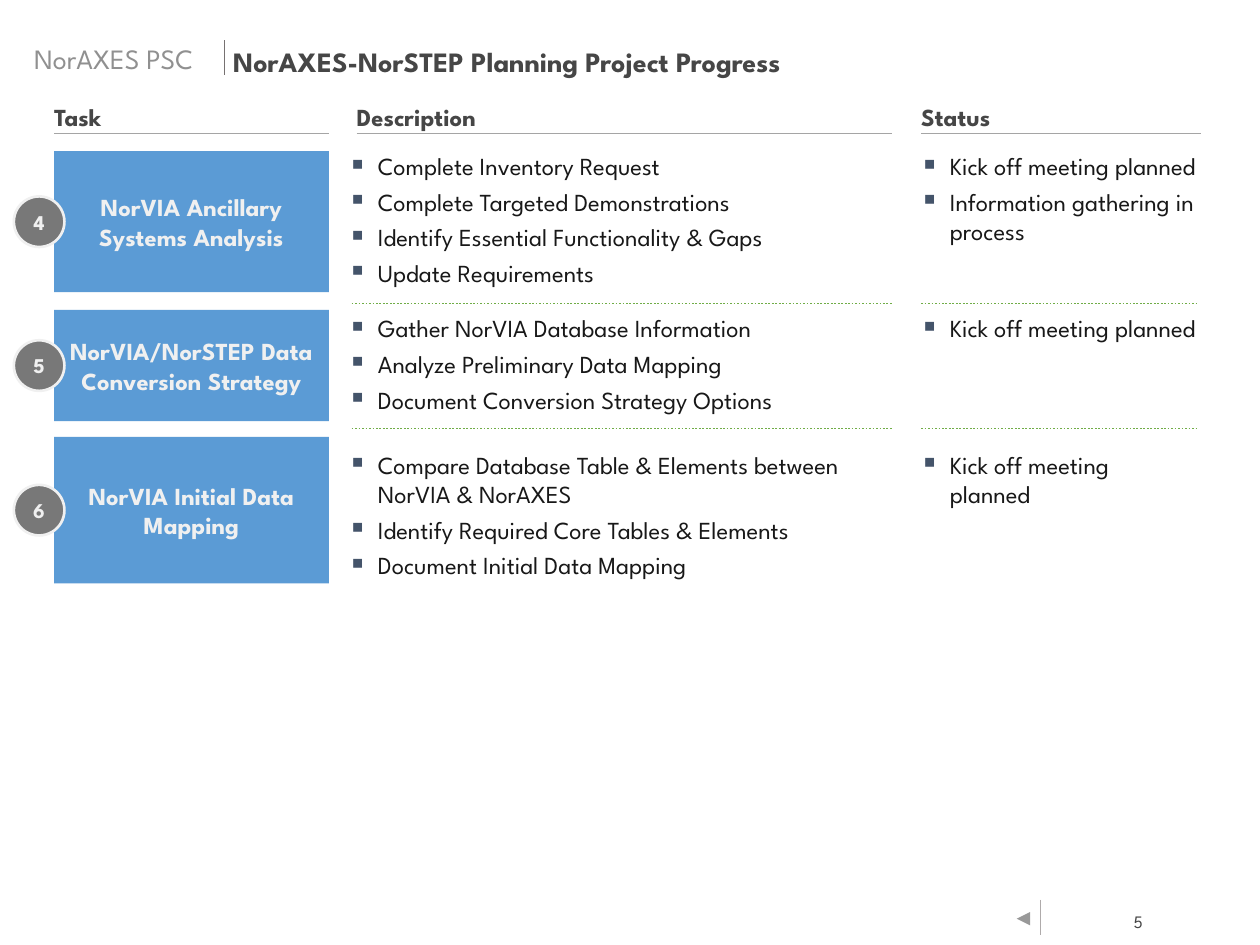
from lxml.etree import SubElement
from pptx import Presentation
from pptx.dml.color import RGBColor
from pptx.enum.dml import MSO_LINE
from pptx.enum.shapes import MSO_CONNECTOR, MSO_SHAPE
from pptx.enum.text import MSO_ANCHOR, MSO_AUTO_SIZE, PP_ALIGN
from pptx.oxml.ns import qn
from pptx.util import Cm, Pt

FONT = "League Spartan"
COLORS = {
    "heading": "464646", "body": "181818", "section": "909090", "light": "F0F0F0",
    "task": "5B9BD5", "badge": "787878", "bullet": "44546A", "rule": "A5A5A5",
    "separator": "70AD47", "title_rule": "767171", "footer_rule": "AFABAB",
    "white": "FFFFFF",
}
TASK_LEFT, TASK_WIDTH = 1.09, 5.54
DESCRIPTION_LEFT, DESCRIPTION_WIDTH = 7.09, 10.9
STATUS_LEFT = 18.62
BADGE_SIZE = 1.02
HEADERS = [("Task", TASK_LEFT, 5.54), ("Description", 7.19, 10.8), ("Status", 18.57, 5.64)]
SEPARATOR_SPANS = [(7.09, 17.98), (18.57, 24.15)]
SEPARATOR_TOPS = [6.12, 8.64]
TASKS = [
    {"number": "4", "name": "NorVIA Ancillary Systems Analysis",
     "top": 3.05, "height": 2.84, "text_top": 3.05, "text_height": 2.84,
     "description": ["Complete Inventory Request", "Complete Targeted Demonstrations",
                     "Identify Essential Functionality & Gaps", "Update Requirements"],
     "status": ["Kick off meeting planned", "Information gathering in process"],
     "status_width": 5.59, "status_height": 2.54},
    {"number": "5", "name": "NorVIA/NorSTEP Data Conversion Strategy",
     "top": 6.25, "height": 2.24, "text_top": 6.32, "text_height": 2.08,
     "description": ["Gather NorVIA Database Information", "Analyze Preliminary Data Mapping",
                     "Document Conversion Strategy Options"],
     "status": ["Kick off meeting planned"],
     "status_width": 5.59, "status_height": 1.19},
    {"number": "6", "name": "NorVIA Initial Data Mapping",
     "top": 8.81, "height": 2.95, "text_top": 9.07, "text_height": 2.69,
     "description": ["Compare Database Table & Elements between NorVIA & NorAXES",
                     "Identify Required Core Tables & Elements", "Document Initial Data Mapping"],
     "status": ["Kick off meeting planned"],
     "status_width": 5.36, "status_height": 1.19},
]


def color(name):
    """Return the named colour."""
    return RGBColor.from_string(COLORS[name])


def set_frame(frame, margins=(0, 0, 0, 0), anchor=MSO_ANCHOR.TOP, wrap=True):
    """Set the margins, anchor and wrapping of a text frame."""
    frame.margin_left, frame.margin_top, frame.margin_right, frame.margin_bottom = map(Cm, margins)
    frame.vertical_anchor = anchor
    frame.word_wrap = wrap
    frame.auto_size = MSO_AUTO_SIZE.NONE


def format_paragraph(paragraph, size, color_name, bold=False, alignment=PP_ALIGN.LEFT):
    """Set the font and alignment of a paragraph."""
    paragraph.alignment = alignment
    font = paragraph.font
    font.name, font.size, font.bold = FONT, Pt(size), bold
    font.color.rgb = color(color_name)


def add_bullet(paragraph):
    """Give a paragraph a square bullet with a hanging indent."""
    properties = paragraph._p.get_or_add_pPr()
    properties.set("marL", str(Cm(0.53)))
    properties.set("indent", str(Cm(-0.53)))
    bullet_color = SubElement(properties, qn("a:buClr"))
    SubElement(bullet_color, qn("a:srgbClr"), val=COLORS["bullet"])
    SubElement(properties, qn("a:buSzPct"), val="125000")
    SubElement(properties, qn("a:buFont"), typeface=FONT)
    SubElement(properties, qn("a:buChar"), char="▪")


def add_label(slide, text, box, size, color_name, bold=False, alignment=PP_ALIGN.LEFT, **frame_options):
    """Add a text box with a single paragraph."""
    frame = slide.shapes.add_textbox(*map(Cm, box)).text_frame
    set_frame(frame, **frame_options)
    frame.text = text
    format_paragraph(frame.paragraphs[0], size, color_name, bold, alignment)


def add_bullet_list(slide, items, box):
    """Add a text box with one bullet for each item."""
    frame = slide.shapes.add_textbox(*map(Cm, box)).text_frame
    set_frame(frame)
    frame.text = "\n".join(items)
    for paragraph in frame.paragraphs:
        add_bullet(paragraph)
        paragraph.space_before = Pt(3.5)
        format_paragraph(paragraph, 14, "body")


def add_line(slide, start, end, color_name, width, dash=None):
    """Add a straight line without a shadow."""
    line = slide.shapes.add_connector(MSO_CONNECTOR.STRAIGHT, *map(Cm, start + end))
    line.line.color.rgb = color(color_name)
    line.line.width = Pt(width)
    if dash:
        line.line.dash_style = dash
    SubElement(line._element.spPr, qn("a:effectLst"))


def add_filled_shape(slide, kind, box, fill):
    """Add a filled shape without outline or shadow."""
    shape = slide.shapes.add_shape(kind, *map(Cm, box))
    shape.shadow.inherit = False
    shape.fill.solid()
    shape.fill.fore_color.rgb = color(fill)
    shape.line.fill.background()
    return shape


def add_title(slide):
    """Fill in the title and the section name beside it."""
    title = slide.shapes.title
    title.left, title.top, title.width, title.height = map(Cm, (4.7, 0.76, 18.57, 0.94))
    margins = (0, 0.13, 0, 0.13)
    set_frame(title.text_frame, margins, MSO_ANCHOR.MIDDLE)
    title.text_frame.text = "NorAXES-NorSTEP Planning Project Progress"
    format_paragraph(title.text_frame.paragraphs[0], 16, "heading", True)
    add_label(slide, "NorAXES PSC", (0.69, 0.71, 3.7, 0.94), 16, "section",
              margins=margins, anchor=MSO_ANCHOR.MIDDLE)
    add_line(slide, (4.52, 0.81), (4.52, 1.52), "title_rule", 0.5)


def add_header(slide, text, left, width):
    """Add an underlined column header."""
    add_line(slide, (left, 2.69), (left + width, 2.69), "rule", 0.75)
    add_label(slide, text, (left, 2.03, width, 0.66), 14, "heading", True,
              margins=(0, 0, 0, 0.05), anchor=MSO_ANCHOR.BOTTOM)


def add_task(slide, task):
    """Add one task with its number, description and status."""
    top, height = task["top"], task["height"]
    block = add_filled_shape(slide, MSO_SHAPE.RECTANGLE, (TASK_LEFT, top, TASK_WIDTH, height), "task")
    set_frame(block.text_frame, (0.25, 0.13, 0.25, 0.13), MSO_ANCHOR.MIDDLE)
    block.text_frame.text = task["name"]
    format_paragraph(block.text_frame.paragraphs[0], 14, "light", True, PP_ALIGN.CENTER)

    badge_top = top + (height - BADGE_SIZE) / 2
    badge = add_filled_shape(slide, MSO_SHAPE.OVAL, (0.28, badge_top, BADGE_SIZE, BADGE_SIZE), "badge")
    badge.line.color.rgb = color("light")
    badge.line.width = Pt(1.5)
    set_frame(badge.text_frame, anchor=MSO_ANCHOR.MIDDLE, wrap=False)
    badge.text_frame.text = task["number"]
    format_paragraph(badge.text_frame.paragraphs[0], 12, "light", True, PP_ALIGN.CENTER)

    add_bullet_list(slide, task["description"],
                    (DESCRIPTION_LEFT, task["text_top"], DESCRIPTION_WIDTH, task["text_height"]))
    add_bullet_list(slide, task["status"],
                    (STATUS_LEFT, task["text_top"], task["status_width"], task["status_height"]))


def add_footer(slide):
    """Add the back button, its rule and the page number."""
    button = add_filled_shape(slide, MSO_SHAPE.ACTION_BUTTON_FORWARD_OR_NEXT,
                              (20.45, 18.29, 0.36, 0.46), "white")
    button.rotation = 180
    add_line(slide, (20.98, 18.14), (20.98, 18.85), "footer_rule", 0.5)
    add_label(slide, "5", (22.43, 18.26, 0.81, 0.61), 10, "heading",
              alignment=PP_ALIGN.RIGHT, margins=(0.2, 0.1, 0.2, 0.1), wrap=False)


def main():
    """Build and save the slide."""
    presentation = Presentation()
    presentation.slide_width, presentation.slide_height = Cm(25.4), Cm(19.05)
    slide = presentation.slides.add_slide(presentation.slide_layouts[5])
    add_title(slide)
    for header in HEADERS:
        add_header(slide, *header)
    for task in TASKS:
        add_task(slide, task)
    for top in SEPARATOR_TOPS:
        for left, right in SEPARATOR_SPANS:
            add_line(slide, (left, top), (right, top), "separator", 1, MSO_LINE.ROUND_DOT)
    add_footer(slide)
    presentation.save("out.pptx")


if __name__ == "__main__":
    main()
